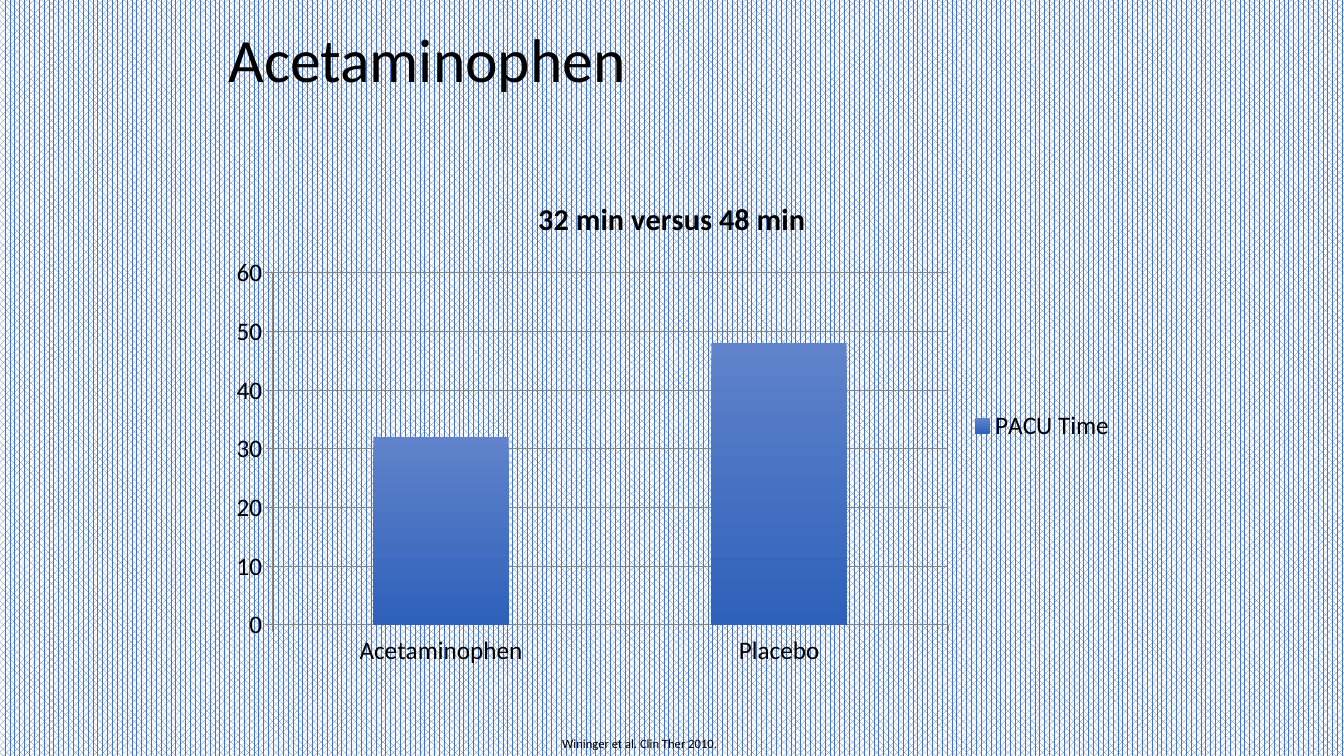
"""Build the acetaminophen recovery time slide."""
import dataclasses

import pptx
import pptx.chart.data
import pptx.dml.color
import pptx.enum.chart
import pptx.enum.dml
import pptx.enum.text
import pptx.util


@dataclasses.dataclass(frozen=True)
class Theme:
    """Colours, font and type sizes of the slide."""
    font: str = "Calibri"
    ink: str = "000000"
    accent: str = "4472C4"
    paper: str = "FFFFFF"
    grid: str = "868686"
    bar_top: str = "6083CB"
    bar_bottom: str = "2E61BA"
    title_size: float = 44
    chart_title_size: float = 21.6
    chart_size: float = 18
    citation_size: float = 9


def apply(target, values):
    """Set attributes of an object from a dict."""
    for name, value in values.items():
        setattr(target, name, value)


def rgb(value):
    """Turn a hex string into a colour."""
    return pptx.dml.color.RGBColor.from_string(value)


def frame(left, top, width, height):
    """Give a position and size in points as a dict."""
    lengths = {"left": left, "top": top, "width": width, "height": height}
    return {name: pptx.util.Pt(value) for name, value in lengths.items()}


class SlideBuilder:
    """Hold the theme and the current slide, and add elements to it."""

    def __init__(self, slide, theme):
        """Keep the slide and its theme."""
        self.slide = slide
        self.theme = theme

    def style(self, font, size, bold=False):
        """Format a font in the theme's face and ink."""
        apply(font, {"name": self.theme.font, "size": pptx.util.Pt(size), "bold": bold})
        font.color.rgb = rgb(self.theme.ink)

    def background(self):
        """Fill the background with a dotted pattern."""
        fill = self.slide.background.fill
        fill.patterned()
        fill.pattern = pptx.enum.dml.MSO_PATTERN.PERCENT_70
        fill.fore_color.rgb = rgb(self.theme.accent)
        fill.back_color.rgb = rgb(self.theme.paper)

    def set_text(self, box, text, size, line_spacing, settings):
        """Put one left-aligned paragraph into a shape."""
        apply(box.text_frame, settings)
        para = box.text_frame.paragraphs[0]
        apply(para, {"alignment": pptx.enum.text.PP_ALIGN.LEFT, "line_spacing": line_spacing})
        span = para.add_run()
        span.text = text
        self.style(span.font, size)

    def title(self, text, place):
        """Move and fill the title placeholder."""
        box = self.slide.shapes.title
        apply(box, place)
        self.set_text(box, text, self.theme.title_size, 0.9, {
            "vertical_anchor": pptx.enum.text.MSO_ANCHOR.MIDDLE,
            "word_wrap": True,
        })

    def citation(self, text, place):
        """Add a small source line."""
        box = self.slide.shapes.add_textbox(**place)
        self.set_text(box, text, self.theme.citation_size, 1.0, {
            "word_wrap": False,
            "auto_size": pptx.enum.text.MSO_AUTO_SIZE.SHAPE_TO_FIT_TEXT,
        })

    def column_chart(self, heading, series_name, values, place):
        """Add a column chart with a title and a legend."""
        data = pptx.chart.data.CategoryChartData()
        data.categories = list(values)
        data.add_series(series_name, list(values.values()))
        kind = pptx.enum.chart.XL_CHART_TYPE.COLUMN_CLUSTERED
        chart = self.slide.shapes.add_chart(
            kind, place["left"], place["top"], place["width"], place["height"], data).chart
        self.style(chart.font, self.theme.chart_size)

        chart.has_title = True
        span = chart.chart_title.text_frame.paragraphs[0].add_run()
        span.text = heading
        self.style(span.font, self.theme.chart_title_size, bold=True)
        chart.chart_title.include_in_layout = False

        chart.has_legend = True
        apply(chart.legend, {
            "position": pptx.enum.chart.XL_LEGEND_POSITION.RIGHT,
            "include_in_layout": False,
        })

        for axis in (chart.category_axis, chart.value_axis):
            axis.major_tick_mark = pptx.enum.chart.XL_TICK_MARK.OUTSIDE
            self.rule(axis.format.line)
        chart.value_axis.has_major_gridlines = True
        self.rule(chart.value_axis.major_gridlines.format.line)

        plot = chart.plots[0]
        apply(plot, {"gap_width": 150, "vary_by_categories": False})
        fill = plot.series[0].format.fill
        fill.gradient()
        fill.gradient_angle = 270
        shades = (self.theme.bar_top, self.theme.bar_bottom)
        for position, (stop, shade) in enumerate(zip(fill.gradient_stops, shades)):
            stop.position = position
            stop.color.rgb = rgb(shade)

    def rule(self, line):
        """Draw an axis or grid line thin and grey."""
        line.width = pptx.util.Pt(0.75)
        line.color.rgb = rgb(self.theme.grid)


def main():
    """Build and save the deck."""
    deck = pptx.Presentation()
    apply(deck, {"slide_width": pptx.util.Pt(960), "slide_height": pptx.util.Pt(540)})
    page = SlideBuilder(deck.slides.add_slide(deck.slide_layouts[5]), Theme())
    page.background()
    page.title("Acetaminophen", frame(156, 0, 648, 90))
    page.column_chart("32 min versus 48 min", "PACU Time",
                      {"Acetaminophen": 32, "Placebo": 48}, frame(156, 126, 648, 356.4))
    page.citation("Wininger et al. Clin Ther 2010.", frame(394.5, 522, 126, 18))
    deck.save("out.pptx")


if __name__ == "__main__":
    main()
